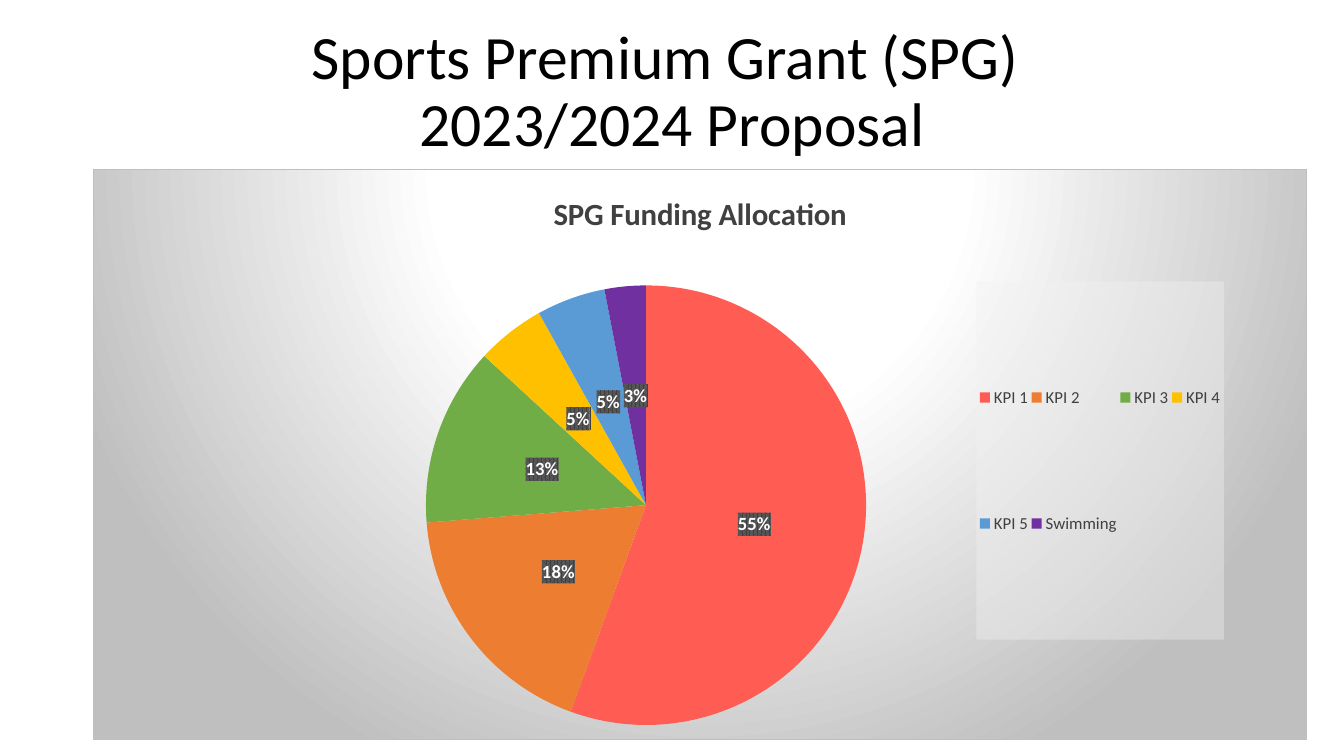
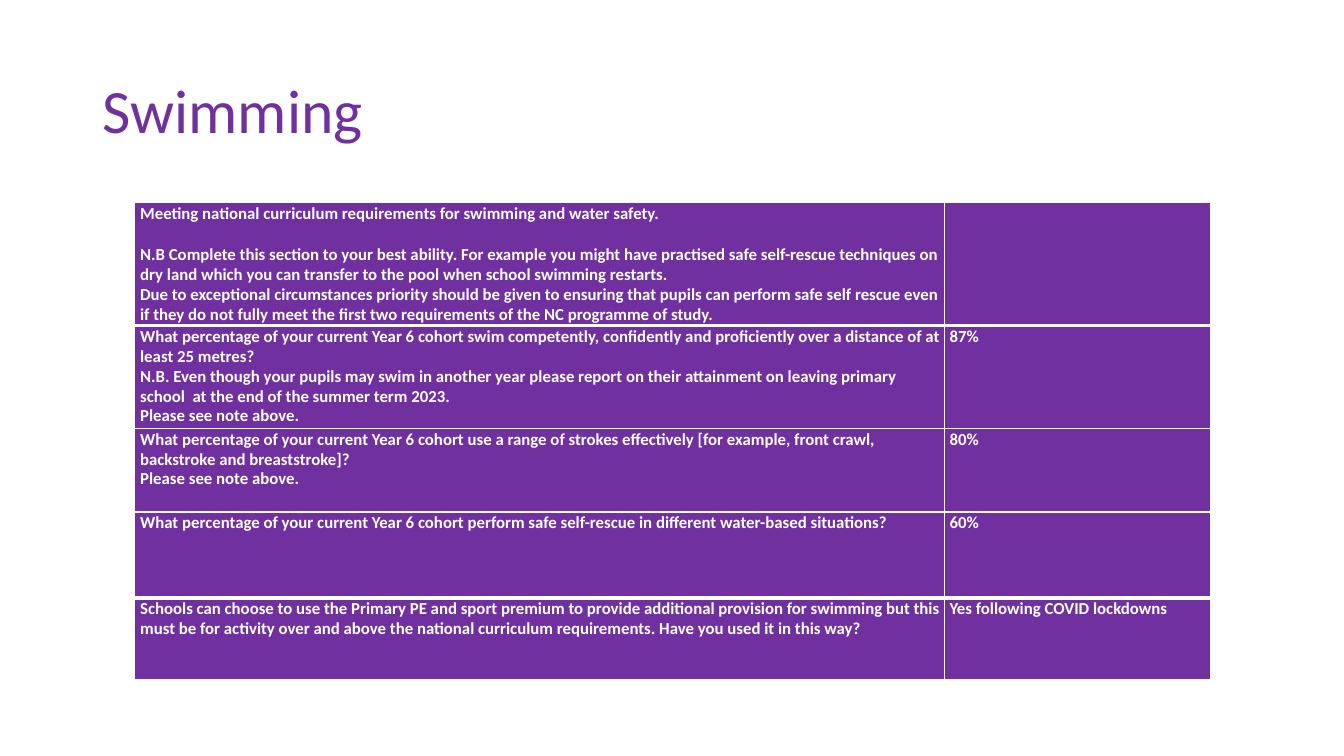
"""Build the sports premium funding and swimming slides."""
from dataclasses import dataclass
from typing import Any

from pptx import Presentation
from pptx.chart.data import CategoryChartData
from pptx.dml.color import RGBColor
from pptx.enum.chart import XL_CHART_TYPE, XL_LABEL_POSITION, XL_LEGEND_POSITION
from pptx.enum.text import MSO_ANCHOR, MSO_AUTO_SIZE, PP_ALIGN
from pptx.oxml import parse_xml
from pptx.oxml.ns import nsdecls, qn
from pptx.util import Inches, Pt

FONT = "Calibri"
COLORS = {
    "black": "000000", "white": "FFFFFF", "grey": "BFBFBF", "pale": "F2F2F2",
    "dark": "404040", "mid": "595959", "red": "FF5C53", "orange": "ED7D31",
    "green": "70AD47", "gold": "FFC000", "blue": "5B9BD5", "purple": "7030A0",
}
WIDTH, HEIGHT = Inches(13.33), Inches(7.5)


@dataclass(frozen=True)
class Box:
    left: float
    top: float
    width: float
    height: float

    def place(self) -> tuple[int, int, int, int]:
        return (int(WIDTH * self.left / 100), int(HEIGHT * self.top / 100),
                int(WIDTH * self.width / 100), int(HEIGHT * self.height / 100))


@dataclass(frozen=True)
class Slice:
    label: str
    value: int
    color: str


@dataclass(frozen=True)
class Para:
    text: str
    line: Any = 0.97
    before: float = 0


@dataclass(frozen=True)
class Row:
    height: float
    paras: list[Para]
    answer: str = ""


SLICES = [
    Slice("KPI 1", 55, "red"),
    Slice("KPI 2", 18, "orange"),
    Slice("KPI 3", 13, "green"),
    Slice("KPI 4", 5, "gold"),
    Slice("KPI 5", 5, "blue"),
    Slice("Swimming", 3, "purple"),
]
NOTE = "Please see note above."
ROWS = [
    Row(1.22, [
        Para("Meeting national curriculum requirements for swimming and water safety.", 1.0),
        Para("N.B Complete this section to your best ability. For example you might have "
             "practised safe self-rescue techniques on dry land which you can transfer to "
             "the pool when school swimming restarts.", before=15),
        Para("Due to exceptional circumstances priority should be given to ensuring that "
             "pupils can perform safe self rescue even", Pt(14.4)),
        Para("if they do not fully meet the first two requirements of the NC programme "
             "of study.", Pt(14.1)),
    ]),
    Row(1.02, [
        Para("What percentage of your current Year 6 cohort swim competently, confidently "
             "and proficiently over a distance of at least 25 metres?"),
        Para("N.B. Even though your pupils may swim in another year please report on their "
             "attainment on leaving primary school  at the end of the summer term 2023."),
        Para(NOTE, Pt(14.1)),
    ], "87%"),
    Row(0.83, [
        Para("What percentage of your current Year 6 cohort use a range of strokes "
             "effectively [for example, front crawl, backstroke and breaststroke]?"),
        Para(NOTE, Pt(14.5)),
    ], "80%"),
    Row(0.85, [
        Para("What percentage of your current Year 6 cohort perform safe self-rescue in "
             "different water-based situations?", 1.0),
    ], "60%"),
    Row(0.81, [
        Para("Schools can choose to use the Primary PE and sport premium to provide "
             "additional provision for swimming but this must be for activity over and "
             "above the national curriculum requirements. Have you used it in this way?"),
    ], "Yes following COVID lockdowns"),
]
SPLIT = (75.28, 24.72)
HEAVY = {1, 4}


def tint(name: str) -> RGBColor:
    return RGBColor.from_string(COLORS[name])


def style(font: Any, size: float, color: str, bold: bool = False) -> None:
    font.name, font.size, font.bold = FONT, Pt(size), bold
    font.color.rgb = tint(color)


def add_page(deck: Any, lines: list[str], box: Box, color: str, align: Any) -> Any:
    slide = deck.slides.add_slide(deck.slide_layouts[5])
    title = slide.shapes.title
    title.left, title.top, title.width, title.height = box.place()
    frame = title.text_frame
    frame.auto_size, frame.vertical_anchor = MSO_AUTO_SIZE.NONE, MSO_ANCHOR.MIDDLE
    para = frame.paragraphs[0]
    para.alignment, para.line_spacing = align, 0.9
    for index, line in enumerate(lines):
        if index:
            para.add_line_break()
        run = para.add_run()
        run.text = line
        style(run.font, 44, color)
    return slide


def solid(color: str, extra: str = "") -> str:
    return f'<a:solidFill><a:srgbClr val="{COLORS[color]}">{extra}</a:srgbClr></a:solidFill>'


def paint(inner: str) -> Any:
    return parse_xml(f'<c:spPr {nsdecls("c", "a")}>{inner}</c:spPr>')


def arrange(host: Any, index: int, box: Box, target: str = "") -> None:
    for old in host.findall(qn("c:layout")):
        host.remove(old)
    sides = {"x": box.left, "y": box.top, "w": box.width, "h": box.height}
    modes = "".join(f'<c:{key}Mode val="edge"/>' for key in "xy")
    sizes = "".join(f'<c:{key} val="{size / 100:.4f}"/>' for key, size in sides.items())
    host.insert(index, parse_xml(
        f'<c:layout {nsdecls("c")}><c:manualLayout>{target}{modes}{sizes}'
        "</c:manualLayout></c:layout>"))


def add_pie(slide: Any, box: Box) -> None:
    name = "SPG Funding Allocation"
    data = CategoryChartData()
    data.categories = [part.label for part in SLICES]
    data.add_series(name, [part.value for part in SLICES])
    chart = slide.shapes.add_chart(XL_CHART_TYPE.PIE, *box.place(), data).chart
    style(chart.font, 10, "black")

    chart.has_title = True
    run = chart.chart_title.text_frame.paragraphs[0].add_run()
    run.text = name
    style(run.font, 22, "dark", True)

    plot = chart.plots[0]
    plot.vary_by_categories = True
    for index, part in enumerate(SLICES):
        fill = plot.series[0].points[index].format.fill
        fill.solid()
        fill.fore_color.rgb = tint(part.color)

    plot.has_data_labels = True
    labels = plot.data_labels
    style(labels.font, 13.3, "white", True)
    labels.show_value, labels.show_percentage = True, False
    labels.number_format, labels.number_format_is_linked = '0"%"', False
    labels.position = XL_LABEL_POSITION.CENTER
    labels._element.find(qn("c:txPr")).addprevious(paint(
        f'<a:pattFill prst="pct75"><a:fgClr><a:srgbClr val="{COLORS["dark"]}"/></a:fgClr>'
        f'<a:bgClr><a:srgbClr val="{COLORS["mid"]}"/></a:bgClr></a:pattFill>'))

    chart.has_legend = True
    legend = chart.legend
    legend.position, legend.include_in_layout = XL_LEGEND_POSITION.RIGHT, False
    style(legend.font, 12, "dark")
    legend._element.find(qn("c:txPr")).addprevious(
        paint(solid("pale", '<a:alpha val="39000"/>')))
    arrange(legend._element, 1, Box(72.76, 19.6, 20.4, 62.9))

    space = chart._chartSpace
    body = space.find(qn("c:chart"))
    arrange(body.find(qn("c:plotArea")), 0, Box(27.4, 20.3, 36.3, 77.2),
            '<c:layoutTarget val="inner"/>')
    stops = "".join(
        f'<a:gs pos="{place * 1000}"><a:srgbClr val="{COLORS[color]}"/></a:gs>'
        for place, color in ((0, "white"), (39, "white"), (100, "grey")))
    body.addnext(paint(
        f'<a:gradFill><a:gsLst>{stops}</a:gsLst><a:path path="circle">'
        '<a:fillToRect l="50000" t="-80000" r="50000" b="180000"/></a:path></a:gradFill>'
        f'<a:ln w="{Pt(0.75)}">{solid("grey")}</a:ln>'))


def fill_cell(cell: Any, paras: list[Para], left: float, row: int) -> None:
    cell.margin_left, cell.margin_top = Inches(left), Inches(0.01)
    cell.margin_right = cell.margin_bottom = 0
    cell.fill.solid()
    cell.fill.fore_color.rgb = tint("purple")
    for index, item in enumerate(paras):
        frame = cell.text_frame
        para = frame.add_paragraph() if index else frame.paragraphs[0]
        para.line_spacing, para.space_before = item.line, Pt(item.before)
        run = para.add_run()
        run.text = item.text
        style(run.font, 12, "white", True)
    edges = {"L": 1, "R": 1, "T": 3 if row in HEAVY else 1, "B": 3 if row + 1 in HEAVY else 1}
    props = cell._tc.get_or_add_tcPr()
    for index, (side, width) in enumerate(edges.items()):
        props.insert(index, parse_xml(
            f'<a:ln{side} {nsdecls("a")} w="{Pt(width)}">{solid("white")}</a:ln{side}>'))


def add_grid(slide: Any, box: Box) -> None:
    place = box.place()
    table = slide.shapes.add_table(len(ROWS), len(SPLIT), *place).table
    table.first_row = table.horz_banding = False
    for column, share in zip(table.columns, SPLIT):
        column.width = int(place[2] * share / 100)
    for index, row in enumerate(ROWS):
        table.rows[index].height = Inches(row.height)
        fill_cell(table.cell(index, 0), row.paras, 0.06, index)
        reply = [Para(row.answer, 1.0)] if row.answer else []
        fill_cell(table.cell(index, 1), reply, 0.05, index)


def main() -> None:
    deck = Presentation()
    deck.slide_width, deck.slide_height = WIDTH, HEIGHT
    slide = add_page(deck, ["Sports Premium Grant (SPG) ", "2023/2024 Proposal"],
                     Box(6.9, 0, 86.25, 24.67), "black", PP_ALIGN.CENTER)
    add_pie(slide, Box(6.9, 22.4, 90.38, 75.47))
    slide = add_page(deck, ["Swimming"], Box(6.9, 5.33, 86.25, 19.33),
                     "purple", PP_ALIGN.LEFT)
    add_grid(slide, Box(9.98, 26.8, 80.1, 63.07))
    deck.save("out.pptx")


if __name__ == "__main__":
    main()
